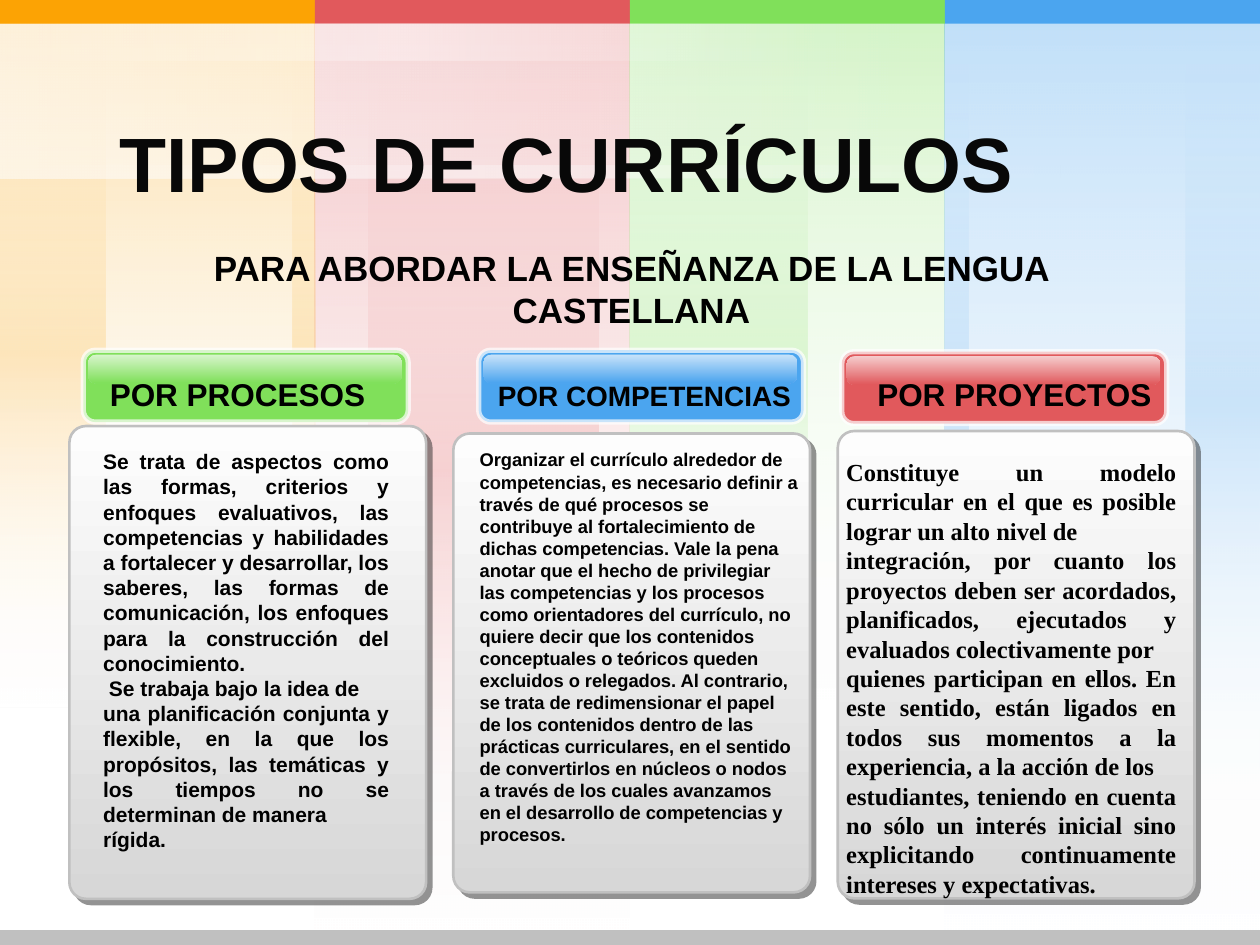
"""Build a slide comparing three types of curriculum."""
from pptx import Presentation
from pptx.dml.color import RGBColor
from pptx.enum.shapes import MSO_SHAPE as Preset
from pptx.enum.text import MSO_ANCHOR as Anchor, PP_ALIGN as Align
from pptx.oxml import parse_xml
from pptx.oxml.ns import nsdecls, qn
from pptx.util import Cm, Pt

WIDTH, HEIGHT = 25.4, 19.05
BAND = WIDTH / 4
ORANGE, RED, GREEN, BLUE = "FCA304", "E1595C", "80E05A", "4BA5EF"
WHITE, BLACK, GREY = "FFFFFF", "000000", "C0C0C0"

BAND_COLOURS = [ORANGE, RED, GREEN, BLUE]
BANDS = [
    (1, RED, 19.05, [(7.42, 4.65, 19.05)]),
    (2, GREEN, 14.27, [(12.7, 3.58, 14.27)]),
    (3, BLUE, 18.97, [(19.05, 0.48, 16.18), (23.9, 1.5, 16.18)]),
    (0, ORANGE, 14.27, [(5.89, 0.46, 14.27), (0, 2.13, 14.27)]),
]
FADE = [(0, WHITE, 35), (100, WHITE, 0)]
GLOW = [(0, WHITE, 0), (50, WHITE, 35), (100, WHITE, 0)]
STRIPS = [
    ((10.57, -7.24, 0.25, 21.39), GLOW),
    ((8, -7.49, 3.1, 19.08), FADE),
    ((7.77, -7.29, 0.74, 16.28), GLOW),
    ((8, -7.49, 3.1, 19.08), FADE),
]
TITLE = "TIPOS DE CURRÍCULOS"
SUBTITLE = "PARA ABORDAR LA ENSEÑANZA DE LA LENGUA CASTELLANA"
COLUMNS = [
    {
        "card": (9.14, 8.74, 7.19, 9.25), "tab": (9.65, 7.06), "colour": BLUE,
        "label": (9.58, 7.44, 6.65, 1.02),
        "name": [(" ", 18), ("POR COMPETENCIAS", 16)],
        "body": (9.42, 8.92, 6.96, 8.33), "font": "Arial", "size": 10.5, "align": Align.LEFT,
        "text": [
            "Organizar el currículo alrededor de competencias, es necesario definir a través de qué "
            "procesos se contribuye al fortalecimiento de dichas competencias. Vale la pena anotar que "
            "el hecho de privilegiar las competencias y los procesos como orientadores del currículo, "
            "no quiere decir que los contenidos",
            "conceptuales o teóricos queden excluidos o relegados. Al contrario, se trata de "
            "redimensionar el papel de los contenidos dentro de las prácticas curriculares, en el "
            "sentido de convertirlos en núcleos o nodos a través de los cuales avanzamos",
            "en el desarrollo de competencias y procesos.",
        ],
    },
    {
        "card": (16.89, 8.69, 7.19, 9.42), "tab": (16.97, 7.09), "colour": RED,
        "label": (17.4, 7.44, 6.1, 1.02),
        "name": [("POR PROYECTOS", 18)],
        "body": (16.81, 9.09, 7.16, 9.25), "font": "Times New Roman", "size": 14,
        "align": Align.JUSTIFY,
        "text": [
            "Constituye un modelo curricular en el que es posible lograr un alto nivel de",
            "integración, por cuanto los proyectos deben ser acordados, planificados, ejecutados y "
            "evaluados colectivamente por",
            "quienes participan en ellos. En este sentido, están ligados en todos sus momentos a la "
            "experiencia, a la acción de los",
            "estudiantes, teniendo en cuenta no sólo un interés inicial sino explicitando "
            "continuamente intereses y expectativas.",
        ],
    },
    {
        "card": (1.4, 8.59, 7.19, 9.53), "tab": (1.68, 7.06), "colour": GREEN,
        "label": (1.93, 7.44, 5.72, 1.02),
        "name": [("POR PROCESOS", 18)],
        "body": (1.83, 8.92, 6.27, 8.71), "font": "Arial", "size": 12, "align": Align.JUSTIFY,
        "text": [
            "Se trata de aspectos como las formas, criterios y enfoques evaluativos, las competencias "
            "y habilidades a fortalecer y desarrollar, los saberes, las formas de comunicación, los "
            "enfoques para la construcción del conocimiento.",
            " Se trabaja bajo la idea de",
            "una planificación conjunta y flexible, en la que los propósitos, las temáticas y los "
            "tiempos no se determinan de manera",
            "rígida.",
        ],
    },
]


def rgb(value):
    return RGBColor.from_string(value)


def colour_xml(value, alpha):
    return f'<a:srgbClr {nsdecls("a")} val="{value}"><a:alpha val="{alpha * 1000}"/></a:srgbClr>'


def add_box(slide, box, fill, radius=None, line=None):
    preset = Preset.RECTANGLE if radius is None else Preset.ROUNDED_RECTANGLE
    shape = slide.shapes.add_shape(preset, *map(Cm, box))
    shape.shadow.inherit = False
    if radius is not None:
        shape.adjustments[0] = radius
    if isinstance(fill, str):
        shape.fill.solid()
        shape.fill.fore_color.rgb = rgb(fill)
    else:
        stops = "".join(f'<a:gs pos="{position * 1000}">{colour_xml(value, alpha)}</a:gs>'
                        for position, value, alpha in fill)
        gradient = parse_xml(f'<a:gradFill {nsdecls("a")} rotWithShape="1"><a:gsLst>{stops}</a:gsLst>'
                             '<a:lin ang="5400000" scaled="0"/></a:gradFill>')
        shape._element.spPr.find(qn("a:prstGeom")).addnext(gradient)
    if line:
        value, width, alpha = line
        shape.line.color.rgb = rgb(value)
        shape.line.width = Pt(width)
        solid = shape.line._ln.find(qn("a:solidFill"))
        solid.replace(solid[0], parse_xml(colour_xml(value, alpha)))
    else:
        shape.line.fill.background()
    return shape


def add_text(slide, box, paragraphs, align=Align.CENTER, font="Arial", colour=BLACK, wrap=True):
    frame = slide.shapes.add_textbox(*map(Cm, box)).text_frame
    frame.word_wrap = wrap
    for index, runs in enumerate(paragraphs):
        paragraph = frame.add_paragraph() if index else frame.paragraphs[0]
        paragraph.alignment = align
        for text, size in runs:
            run = paragraph.add_run()
            run.text = text
            run.font.name, run.font.size, run.font.bold = font, Pt(size), True
            run.font.color.rgb = rgb(colour)
    return frame


def add_background(slide):
    for index, colour, height, glows in BANDS:
        full = (index * BAND, 0, BAND, height)
        fade = [(0, colour, 20), (100, WHITE, 0)]
        add_box(slide, full, fade)
        for left, width, glow_height in glows:
            add_box(slide, (left, 0, width, glow_height),
                    [(0, WHITE, 0), (50, colour, 20), (100, WHITE, 0)])
        add_box(slide, full, fade)
    for index, colour in enumerate(BAND_COLOURS):
        add_box(slide, (index * BAND, 0, BAND, 0.48), colour)
    for box, stops in STRIPS:
        add_box(slide, box, stops).rotation = 270
    add_box(slide, (0, 18.75, WIDTH, 0.3), GREY)


def add_column(slide, column):
    card = add_box(slide, column["card"], [(0, "FDFDFD", 100), (100, "D7D7D7", 100)],
                   0.046, (GREY, 1.5, 100))
    card._element.spPr.find(qn("a:effectLst")).append(parse_xml(
        f'<a:outerShdw {nsdecls("a")} blurRad="0" dist="{Pt(4.2)}" dir="2700000" algn="ctr" '
        f'rotWithShape="0">{colour_xml("292929", 50)}</a:outerShdw>'))
    left, top = column["tab"]
    add_box(slide, (left, top, 6.55, 1.45), column["colour"], 0.167, (WHITE, 3, 70))
    add_box(slide, (left + 0.1, top + 0.09, 6.32, 0.58),
            [(0, WHITE, 70), (100, column["colour"], 70)], 0.284)
    add_text(slide, column["label"], [column["name"]], wrap=False)
    add_text(slide, column["body"], [[(text, column["size"])] for text in column["text"]],
             column["align"], column["font"])


def main():
    presentation = Presentation()
    presentation.slide_width, presentation.slide_height = Cm(WIDTH), Cm(HEIGHT)
    slide = presentation.slides.add_slide(presentation.slide_layouts[6])
    add_background(slide)
    for column in COLUMNS:
        add_column(slide, column)
    title = add_text(slide, (1.27, 0.53, 20.32, 3.66), [[(TITLE, 44)]], colour="080808")
    title.vertical_anchor = Anchor.BOTTOM
    title.margin_bottom = 0
    add_text(slide, (1.73, 4.85, 22, 1.96), [[(SUBTITLE, 20)]])
    presentation.save("out.pptx")


if __name__ == "__main__":
    main()
